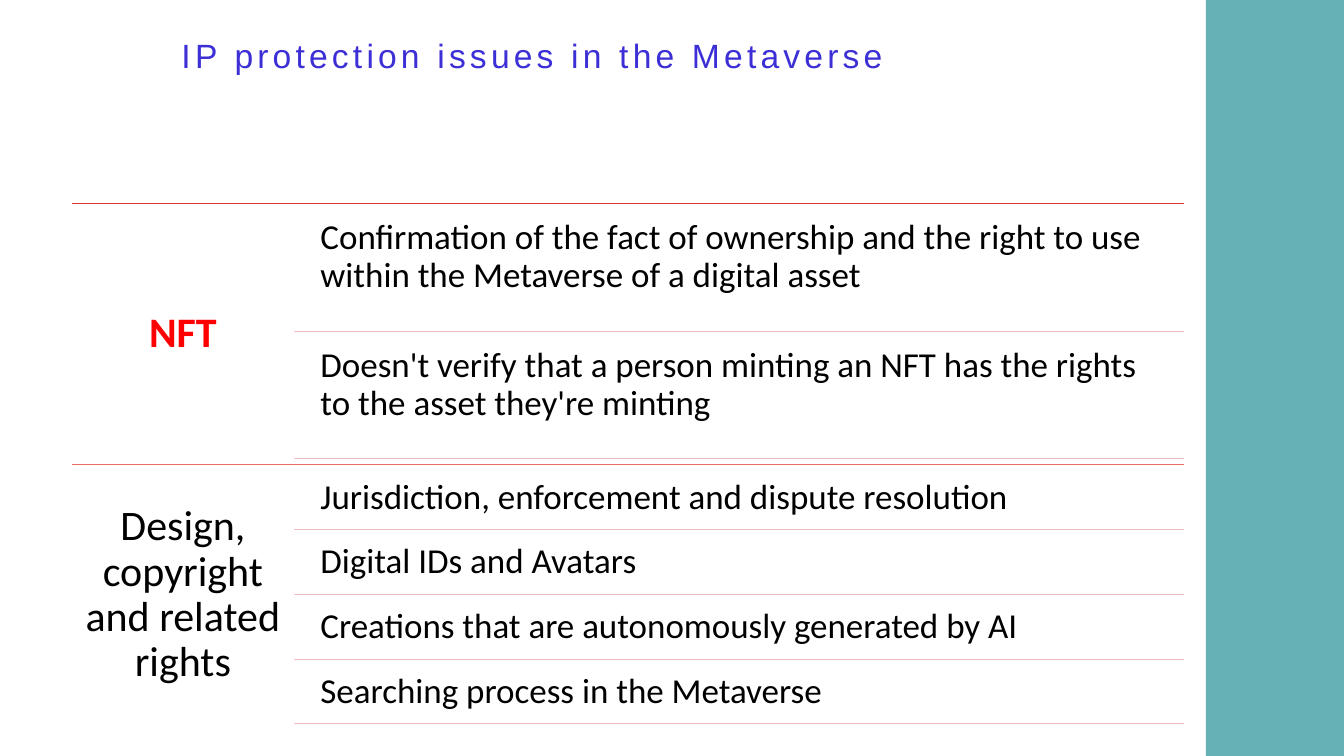
import pptx
import pptx.dml.color
import pptx.enum.shapes
import pptx.enum.text
import pptx.oxml.ns
import pptx.util
from lxml import etree

Inches = pptx.util.Inches
Pt = pptx.util.Pt
RGBColor = pptx.dml.color.RGBColor
Align = pptx.enum.text.PP_ALIGN
Anchor = pptx.enum.text.MSO_ANCHOR
qn = pptx.oxml.ns.qn

TEAL = RGBColor(0x65, 0xB1, 0xB6)
INDIGO = RGBColor(0x3C, 0x2F, 0xD6)
RED = RGBColor(0xFF, 0x00, 0x00)
BLACK = RGBColor(0x00, 0x00, 0x00)
CRIMSON = RGBColor(0xDD, 0x32, 0x32)
ROSE = RGBColor(0xEF, 0x69, 0x69)
PALE_PINK = RGBColor(0xEF, 0xBF, 0xBF)

TOPIC_LEFT, TOPIC_WIDTH, TOPIC_HEIGHT = 0.71, 2.21, 2.59
ISSUE_LEFT, ISSUE_WIDTH = 3.08, 8.65
RULE_LEFT, RULE_RIGHT = TOPIC_LEFT + TOPIC_WIDTH, 11.74

# topic, topic colour, bold, rule colour, top, gap above each issue, last rule, issues
TOPICS = [
    ("NFT", RED, True, CRIMSON, 2.02, 0.06, 4.55, [
        "Confirmation of the fact of ownership and the right to use "
        "within the Metaverse of a digital asset",
        "Doesn't verify that a person minting an NFT has the rights "
        "to the asset they're minting",
    ]),
    ("Design, copyright and related rights", BLACK, False, ROSE, 4.61, 0.04, 7.18, [
        "Jurisdiction, enforcement and dispute resolution",
        "Digital IDs and Avatars",
        "Creations that are autonomously generated by AI",
        "Searching process in the Metaverse",
    ]),
]


class IssuesSlide:
    def __init__(self, deck):
        self.page = deck.slides.add_slide(deck.slide_layouts[5])

    def format_text(self, shape, text, size, color, font="Calibri", bold=False,
                    align=Align.LEFT, anchor=Anchor.TOP, inset=0.1):
        frame = shape.text_frame
        frame.text = text
        frame.word_wrap = True
        frame.auto_size = pptx.enum.text.MSO_AUTO_SIZE.NONE
        frame.vertical_anchor = anchor
        frame.margin_left = frame.margin_right = Inches(inset)
        frame.margin_top = frame.margin_bottom = Inches(inset)
        para = frame.paragraphs[0]
        para.alignment = align
        para.line_spacing = 0.9
        span = para.runs[0]
        span.font.name = font
        span.font.size = Pt(size)
        span.font.bold = bold
        span.font.color.rgb = color
        return span

    def title(self, text):
        box = self.page.shapes.title
        box.left, box.top = Inches(1.7), Inches(0.34)
        box.width, box.height = Inches(10.57), Inches(0.46)
        span = self.format_text(box, text, 24, INDIGO, font="Arial",
                                anchor=Anchor.MIDDLE)
        box.text_frame.margin_top = box.text_frame.margin_bottom = Inches(0.05)
        span.font._element.set("spc", "300")

    def sidebar(self):
        bar = self.page.shapes.add_shape(
            pptx.enum.shapes.MSO_SHAPE.RECTANGLE,
            Inches(11.96), 0, Inches(1.37), Inches(7.5))
        bar.shadow.inherit = False
        bar.fill.solid()
        bar.fill.fore_color.rgb = TEAL
        bar.line.fill.background()

    def text(self, text, left, top, width, height, size, color, **style):
        box = self.page.shapes.add_textbox(
            Inches(left), Inches(top), Inches(width), Inches(height))
        self.format_text(box, text, size, color, **style)

    def rule(self, left, top, color, shadow=False):
        line = self.page.shapes.add_connector(
            pptx.enum.shapes.MSO_CONNECTOR.STRAIGHT,
            Inches(left), Inches(top), Inches(RULE_RIGHT), Inches(top))
        line.line.color.rgb = color
        line.line.width = Pt(0.5)
        effects = etree.SubElement(line._element.spPr, qn("a:effectLst"))
        if shadow:
            outer = etree.SubElement(
                effects, qn("a:outerShdw"), blurRad=str(Pt(4.5)),
                dist=str(Pt(1.5)), dir="5400000", rotWithShape="0")
            black = etree.SubElement(outer, qn("a:srgbClr"), val="000000")
            etree.SubElement(black, qn("a:alpha"), val="63000")

    def topic(self, name, color, bold, rule_color, top, gap, bottom, issues):
        self.rule(TOPIC_LEFT, top, rule_color, shadow=True)
        self.text(name, TOPIC_LEFT, top, TOPIC_WIDTH, TOPIC_HEIGHT, 30, color,
                  bold=bold, align=Align.CENTER, anchor=Anchor.MIDDLE, inset=0.12)
        pitch = (bottom - top) / len(issues)
        for row, issue in enumerate(issues):
            row_top = top + row * pitch
            self.text(issue, ISSUE_LEFT, row_top + gap, ISSUE_WIDTH, pitch - gap,
                      25, BLACK)
            self.rule(RULE_LEFT, row_top + pitch, PALE_PINK)


def main():
    deck = pptx.Presentation()
    deck.slide_width, deck.slide_height = Inches(13.33), Inches(7.5)
    slide = IssuesSlide(deck)
    slide.sidebar()
    slide.title("IP protection issues in the Metaverse")
    for topic in TOPICS:
        slide.topic(*topic)
    deck.save("out.pptx")


if __name__ == "__main__":
    main()
